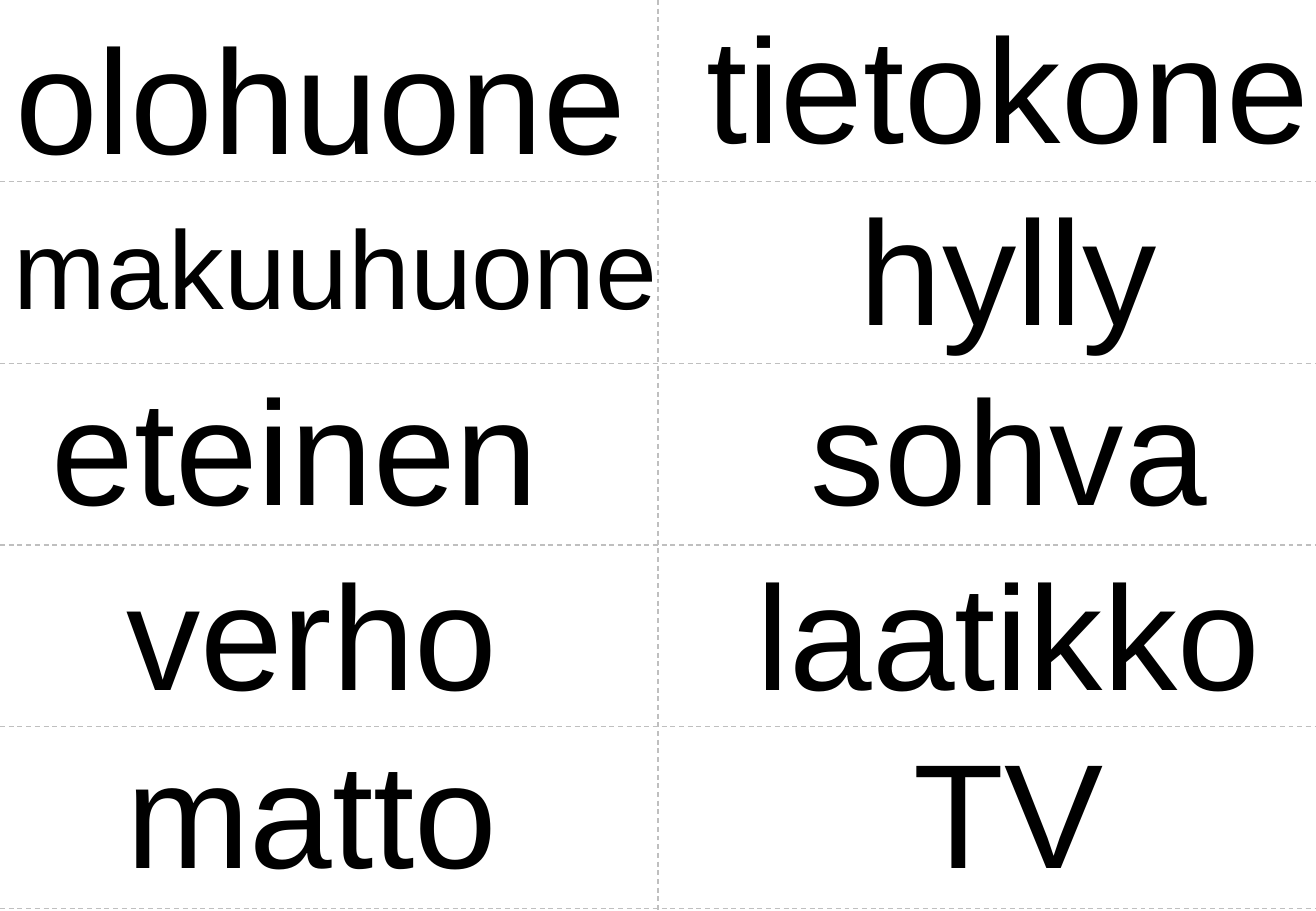
from lxml import etree
from pptx import Presentation
from pptx.dml.color import RGBColor
from pptx.enum.dml import MSO_LINE
from pptx.enum.shapes import MSO_CONNECTOR
from pptx.enum.text import MSO_AUTO_SIZE, PP_ALIGN
from pptx.oxml.ns import qn
from pptx.util import Pt

STRAIGHT = MSO_CONNECTOR.STRAIGHT
DASH = MSO_LINE.DASH
GROW = MSO_AUTO_SIZE.SHAPE_TO_FIT_TEXT
CENTER = PP_ALIGN.CENTER

COLORS = {"word": "000000", "cut": "BFBFBF"}
SLIDE_W, SLIDE_H = 779.8, 540
ROW_H = 107.7
ROWS = 5

prs = Presentation()
prs.slide_width, prs.slide_height = Pt(SLIDE_W), Pt(SLIDE_H)
slide = prs.slides.add_slide(prs.slide_layouts[6])


def add_word(text, left, top, width, height=106.6, size=88):
    box = slide.shapes.add_textbox(Pt(left), Pt(top), Pt(width), Pt(height))
    frame = box.text_frame
    frame.margin_left = frame.margin_right = Pt(3.6)
    frame.margin_top = frame.margin_bottom = Pt(3.6)
    frame.word_wrap = False
    frame.auto_size = GROW
    paragraph = frame.paragraphs[0]
    paragraph.alignment = CENTER
    run = paragraph.add_run()
    run.text = text
    run.font.name = "Arial"
    run.font.size = Pt(size)
    run.font.color.rgb = RGBColor.from_string(COLORS["word"])


def add_cut_line(x1, y1, x2, y2):
    cut = slide.shapes.add_connector(STRAIGHT, Pt(x1), Pt(y1), Pt(x2), Pt(y2))
    cut.line.color.rgb = RGBColor.from_string(COLORS["cut"])
    cut.line.width = Pt(0.75)
    cut.line.dash_style = DASH
    etree.SubElement(cut._element.spPr, qn("a:effectLst"))


# Left column: rooms and textiles
add_word("olohuone", 5, 0, 370)
add_word("makuuhuone", 4.3, 113.8, 389.5, height=81.4, size=66)
add_word("eteinen", 26.6, 208, 296.6)
add_word("verho", 70.6, 317.5, 228.2)
add_word("matto", 70.6, 423.4, 228.2)

# Right column: furniture and devices
add_word("tietokone", 414.7, -6.5, 365)
add_word("hylly", 505.4, 101.5, 184.3)
add_word("sohva", 475.9, 208, 243.4)
add_word("laatikko", 444.2, 317.5, 306.7)
add_word("TV", 537.1, 423.4, 121)

# Cut lines between the cards
add_cut_line(SLIDE_W / 2, 0, SLIDE_W / 2, SLIDE_H)
for row in range(1, ROWS + 1):
    add_cut_line(0, row * ROW_H, SLIDE_W, row * ROW_H)

prs.save("out.pptx")
